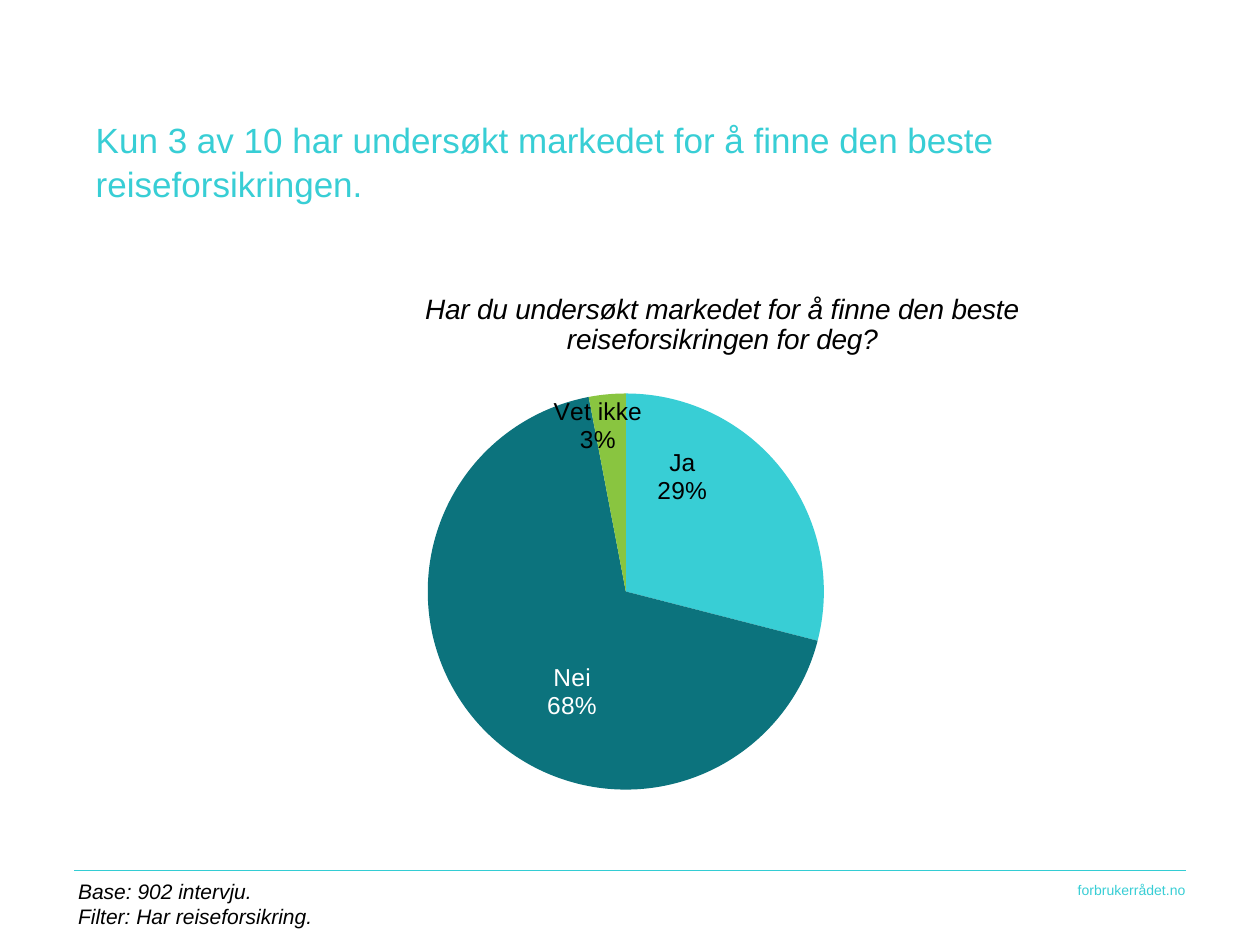
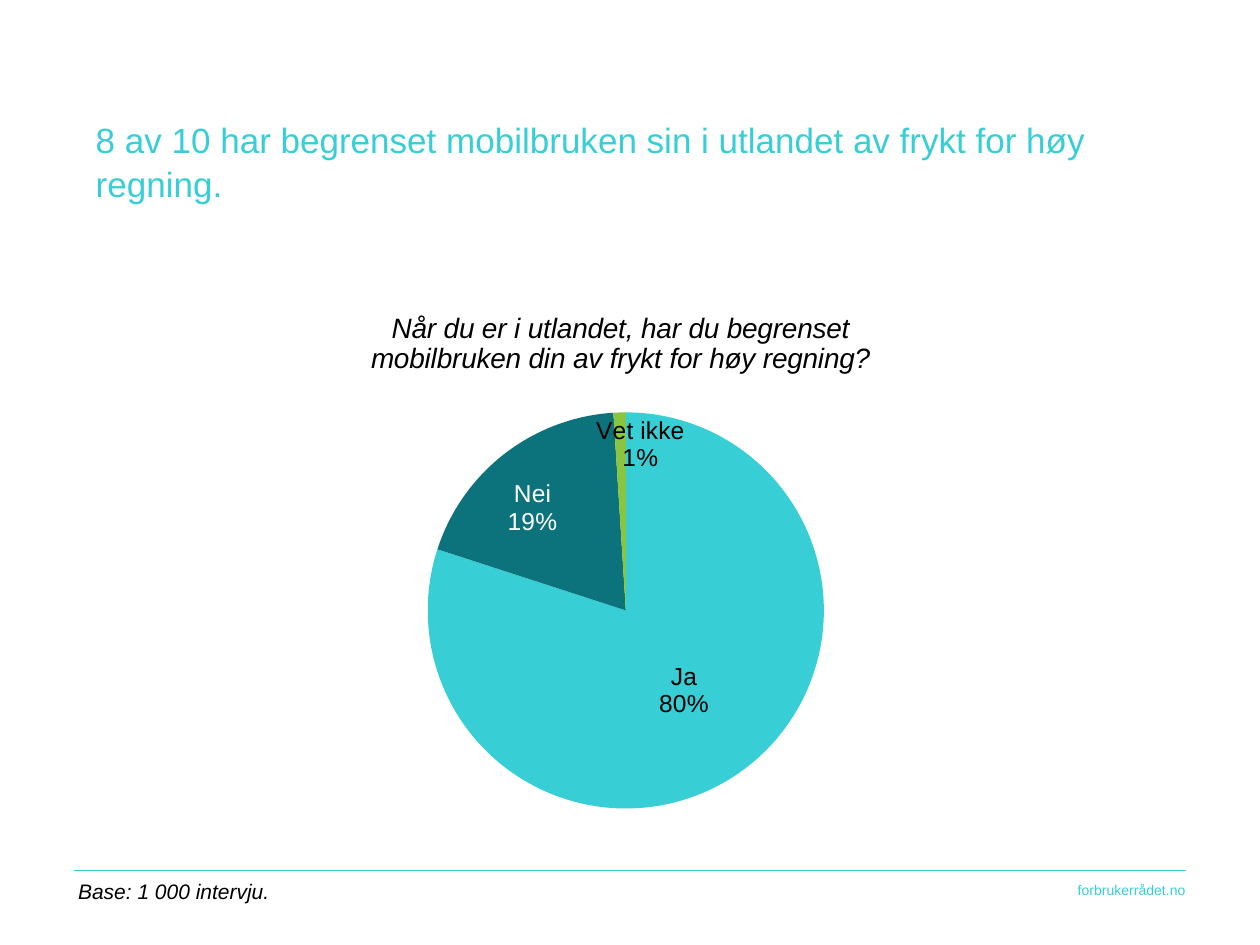
from dataclasses import dataclass

from lxml import etree
from pptx import Presentation
from pptx import util as u
from pptx.chart import data as cd
from pptx.dml.color import RGBColor
from pptx.enum import chart as ch
from pptx.enum import shapes, text
from pptx.oxml import ns

FONT = "Arial"
HUES = {"cyan": "38CED5", "teal": "0C737D", "green": "89C540",
        "rule": "33CDD4", "black": "000000", "white": "FFFFFF"}
CHART_W, CHART_H = 6.14, 4.57


@dataclass
class Slice:
    name: str
    fill: str
    ink: str


@dataclass
class Page:
    title: str
    query: str
    query_x: float
    top: float
    vals: tuple[int, ...]
    shifts: tuple[tuple[float, float], ...]
    notes: tuple[str, ...]


SLICES = (Slice("Ja", "cyan", "black"),
          Slice("Nei", "teal", "white"),
          Slice("Vet ikke", "green", "black"))

PAGES = (
    Page("Kun 3 av 10 har undersøkt markedet for å finne den beste reiseforsikringen.",
         "Har du undersøkt markedet for å finne den beste reiseforsikringen for deg?",
         0.1, 2.2, (29, 68, 3),
         ((-0.17, -0.43), (0.15, 0.26), (-0.15, -0.53)),
         ("Base: 902 intervju.", "Filter: Har reiseforsikring.")),
    Page("8 av 10 har begrenset mobilbruken sin i utlandet av frykt for høy regning.",
         "Når du er i utlandet, har du begrenset mobilbruken din av frykt for høy regning?",
         0.03, 2.35, (80, 19, 1),
         ((0, 0), (-0.26, -0.19), (0.14, -0.53)),
         ("Base: 1 000 intervju.",)),
)


def hue(name: str) -> RGBColor:
    return RGBColor.from_string(HUES[name])


def style(font, size: float, ink: str, slant: bool = False) -> None:
    font.name, font.size, font.bold, font.italic = FONT, u.Pt(size), False, slant
    font.color.rgb = hue(ink)


def write(frame, lines, size: float, ink: str, slant: bool = False,
          align=text.PP_ALIGN.LEFT) -> None:
    frame.word_wrap = True
    frame.auto_size = text.MSO_AUTO_SIZE.NONE
    frame.vertical_anchor = text.MSO_ANCHOR.TOP
    frame.margin_left = frame.margin_right = 0
    frame.margin_top = frame.margin_bottom = 0
    for i, line in enumerate(lines):
        para = frame.paragraphs[0] if i == 0 else frame.add_paragraph()
        para.alignment = align
        run = para.add_run()
        run.text = line
        style(run.font, size, ink, slant)


def add_text(slide, box, lines, **look) -> None:
    frame = slide.shapes.add_textbox(*map(u.Inches, box)).text_frame
    write(frame, lines, **look)


def add_tag(parent, name: str, val: str):
    tag = etree.SubElement(parent, ns.qn(f"c:{name}"))
    tag.set("val", val)
    return tag


def place(parent, index: int, **spots) -> None:
    for old in parent.findall(ns.qn("c:layout")):
        parent.remove(old)
    layout = etree.Element(ns.qn("c:layout"))
    manual = etree.SubElement(layout, ns.qn("c:manualLayout"))
    for name, val in spots.items():
        add_tag(manual, name, str(val))
    parent.insert(index, layout)


def set_flags(labels) -> None:
    for name, val in (("showVal", "0"), ("showCatName", "1"), ("showPercent", "1")):
        labels.find(ns.qn(f"c:{name}")).set("val", val)
    gap = etree.Element(ns.qn("c:separator"))
    gap.text = "\n"
    labels.find(ns.qn("c:showBubbleSize")).addnext(gap)


def add_pie(slide, page: Page) -> None:
    data = cd.CategoryChartData()
    data.categories = [part.name for part in SLICES]
    data.add_series("Series 1", page.vals)
    box = map(u.Inches, (2.72, page.top, CHART_W, CHART_H))
    chart = slide.shapes.add_chart(ch.XL_CHART_TYPE.PIE, *box, data).chart
    chart.has_legend = False
    style(chart.font, 18, "black")

    chart.has_title = True
    run = chart.chart_title.text_frame.paragraphs[0].add_run()
    run.text = page.query
    style(run.font, 16, "black", True)
    root = chart.element.find(ns.qn("c:chart"))
    place(root.find(ns.qn("c:title")), 1, xMode="edge", yMode="edge",
          x=page.query_x, y=0.016)
    place(root.find(ns.qn("c:plotArea")), 0, layoutTarget="inner",
          xMode="edge", yMode="edge", x=0.076, y=0.202, w=0.58, h=0.688)

    series = chart.plots[0].series[0]
    labels = series.data_labels
    labels.number_format, labels.number_format_is_linked = "0%", False
    labels.position = ch.XL_LABEL_POSITION.CENTER
    style(labels.font, 14, "white")
    for i, (part, shift) in enumerate(zip(SLICES, page.shifts)):
        point = series.points[i]
        point.format.fill.solid()
        point.format.fill.fore_color.rgb = hue(part.fill)
        point.format.line.fill.background()
        label = point.data_label
        style(label.font, 14, part.ink)
        label.position = ch.XL_LABEL_POSITION.CENTER
        dx, dy = shift
        tag = series.points[i].data_label.font and next(
            t for t in series._element.iter(ns.qn("c:dLbl"))
            if t.find(ns.qn("c:idx")).get("val") == str(i))
        if dx or dy:
            place(tag, 1, x=round(dx / CHART_W, 3), y=round(dy / CHART_H, 3))
        set_flags(tag)
    group = series._element.find(ns.qn("c:dLbls"))
    set_flags(group)
    for old in group.findall(ns.qn("c:showLeaderLines")):
        group.remove(old)
    add_tag(group, "showLeaderLines", "0")


def add_foot(slide) -> None:
    ends = map(u.Inches, (0.59, 6.91, 9.41, 6.91))
    rule = slide.shapes.add_connector(shapes.MSO_CONNECTOR.STRAIGHT, *ends)
    rule.line.color.rgb = hue("rule")
    rule.line.width = u.Pt(0.92)
    etree.SubElement(rule._element.spPr, ns.qn("a:effectLst"))
    add_text(slide, (6.5, 7, 2.91, 0.15), ["forbrukerrådet.no"],
             size=8, ink="cyan", align=text.PP_ALIGN.RIGHT)


def add_page(deck, page: Page) -> None:
    slide = deck.slides.add_slide(deck.slide_layouts[5])
    add_foot(slide)
    title = slide.shapes.title
    title.left, title.top = u.Inches(0.76), u.Inches(0.92)
    title.width, title.height = u.Inches(7.95), u.Inches(0.7)
    write(title.text_frame, [page.title], 20, "cyan")
    title.text_frame.paragraphs[0].line_spacing = 1.05
    add_text(slide, (0.62, 6.97, 4.57, 0.2 * len(page.notes)), page.notes,
             size=12, ink="black", slant=True)
    add_pie(slide, page)


def main() -> None:
    deck = Presentation()
    deck.slide_width, deck.slide_height = u.Inches(10), u.Inches(7.5)
    for page in PAGES:
        add_page(deck, page)
    deck.save("out.pptx")


if __name__ == "__main__":
    main()
